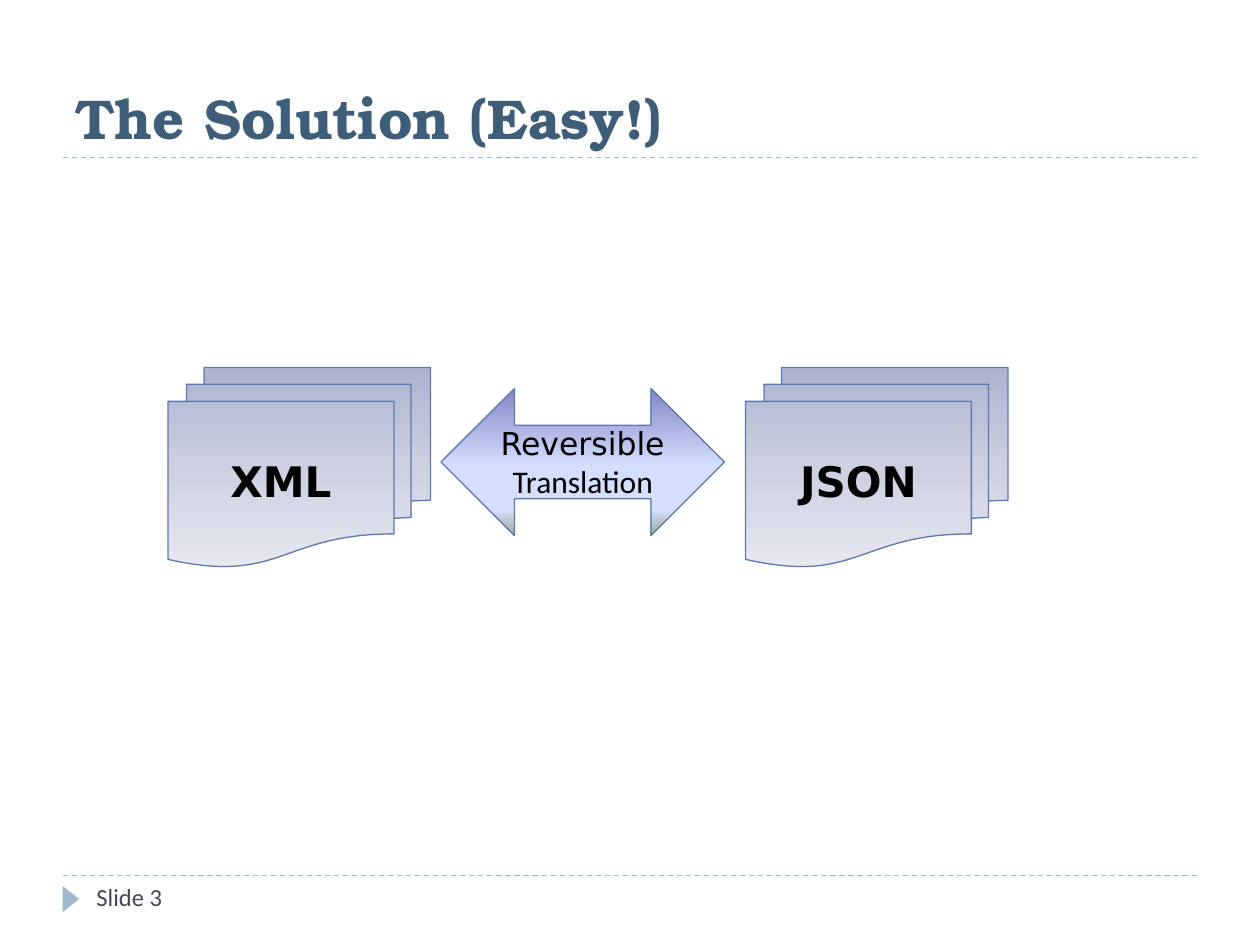
from lxml.etree import SubElement
from pptx import Presentation
from pptx.dml.color import RGBColor
from pptx.enum.dml import MSO_LINE
from pptx.enum.shapes import MSO_CONNECTOR, MSO_SHAPE
from pptx.enum.text import MSO_ANCHOR, PP_ALIGN
from pptx.oxml.ns import qn
from pptx.util import Pt

ACCENT = "9FB8CD"
OUTLINE = "5F79B0"
DOCUMENT_STOPS = [(0, "ADB3CF"), (50, "CCD0E0"), (100, "E6E7EF")]
ARROW_STOPS = [(0, "8488C4"), (53, "D4DEFF"), (83, "D4DEFF"), (100, "96AB94")]


def color(hex_value):
    return RGBColor.from_string(hex_value)


def write_text(shape, lines, size, fonts, text_color="000000", bold=False,
               align=PP_ALIGN.LEFT, anchor=MSO_ANCHOR.TOP, space_before=0):
    """Write one paragraph, with a line break between lines and a font for each."""
    frame = shape.text_frame
    frame.word_wrap = True
    frame.vertical_anchor = anchor
    paragraph = frame.paragraphs[0]
    paragraph.alignment = align
    paragraph.space_before = Pt(space_before)
    for index, (line, font_name) in enumerate(zip(lines, fonts)):
        if index:
            paragraph.add_line_break()
        run = paragraph.add_run()
        run.text = line
        run.font.name = font_name
        run.font.size = Pt(size)
        run.font.bold = bold
        run.font.color.rgb = color(text_color)


def add_rule(slide, y):
    line = slide.shapes.add_connector(
        MSO_CONNECTOR.STRAIGHT, Pt(36), Pt(y), Pt(684), Pt(y))
    line.line.color.rgb = color(ACCENT)
    line.line.width = Pt(0.75)
    line.line.dash_style = MSO_LINE.DASH
    SubElement(line._element.spPr, qn("a:effectLst"))


def fill_downward(shape, stops):
    """Fill with a top-to-bottom gradient of any number of stops."""
    shape.fill.gradient()
    shape.fill.gradient_angle = 270
    stop_list = shape._element.spPr.find(".//" + qn("a:gsLst"))
    for old_stop in list(stop_list):
        stop_list.remove(old_stop)
    for percent, hex_value in stops:
        stop = SubElement(stop_list, qn("a:gs"), pos=str(percent * 1000))
        SubElement(stop, qn("a:srgbClr"), val=hex_value)


def add_gradient_shape(slide, kind, box, stops, lines, **text_format):
    shape = slide.shapes.add_shape(kind, *map(Pt, box))
    shape.shadow.inherit = False
    fill_downward(shape, stops)
    shape.line.color.rgb = color(OUTLINE)
    shape.line.width = Pt(0.75)
    write_text(shape, lines, align=PP_ALIGN.CENTER, anchor=MSO_ANCHOR.MIDDLE,
               **text_format)


def add_title(slide, text):
    title = slide.shapes.title
    title.left, title.top, title.width, title.height = map(Pt, (36, 12, 648, 78))
    write_text(title, [text], size=32, fonts=["TeX Gyre Bonum"],
               text_color="3E5D78", bold=True, anchor=MSO_ANCHOR.BOTTOM)


def add_footer(slide, text):
    marker = slide.shapes.add_shape(
        MSO_SHAPE.ISOSCELES_TRIANGLE, Pt(33), Pt(509), Pt(15), Pt(9.5))
    marker.rotation = 90
    marker.shadow.inherit = False
    marker.fill.solid()
    marker.fill.fore_color.rgb = color(ACCENT)
    marker.line.fill.background()
    label = slide.shapes.add_textbox(Pt(48), Pt(500.4), Pt(156), Pt(28.8))
    write_text(label, [text], size=14, fonts=["Calibri"], text_color="464653")


def main():
    presentation = Presentation()
    presentation.slide_width, presentation.slide_height = Pt(720), Pt(540)
    slide = presentation.slides.add_slide(presentation.slide_layouts[5])

    # Frame: rules, title and footer
    for y in (500.4, 90):
        add_rule(slide, y)
    add_title(slide, "The Solution (Easy!)")
    add_footer(slide, "Slide 3")

    # Document stacks on either side
    for left, name in ((96, "XML"), (426, "JSON")):
        add_gradient_shape(slide, MSO_SHAPE.FLOWCHART_MULTIDOCUMENT,
                           (left, 210, 150, 114), DOCUMENT_STOPS, [name],
                           size=24, fonts=["DejaVu Sans"], bold=True,
                           space_before=14)

    # Two-way arrow between them
    add_gradient_shape(slide, MSO_SHAPE.LEFT_RIGHT_ARROW, (252, 222, 162, 84),
                       ARROW_STOPS, ["Reversible", "Translation"], size=18,
                       fonts=["DejaVu Sans", "Calibri"], space_before=10)

    presentation.save("out.pptx")


if __name__ == "__main__":
    main()
